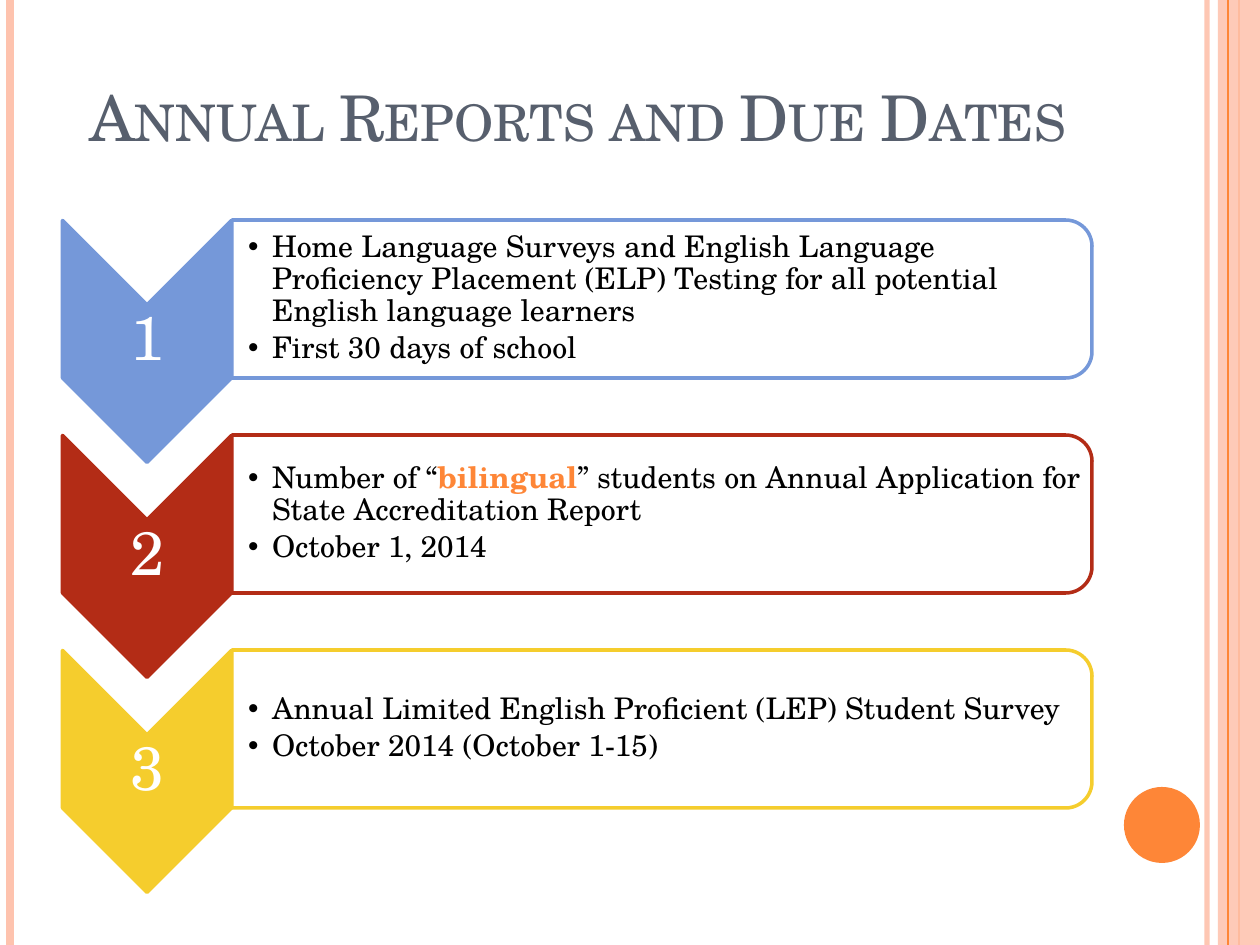
import pptx
import pptx.util
import pptx.dml.color
import pptx.enum.shapes
import pptx.enum.text
import pptx.oxml
import pptx.oxml.ns

SCALE = 914400 / 126
FONT = "TeX Gyre Schola"
PEACH, ORANGE, WHITE, BLACK = "FEC3AE", "FE8637", "FFFFFF", "000000"
Kind = pptx.enum.shapes.MSO_SHAPE
Align = pptx.enum.text.PP_ALIGN


def px(n):
    return round(n * SCALE)


def color(text):
    return pptx.dml.color.RGBColor.from_string(text)


def add(parent, tag, **attrs):
    node = pptx.oxml.parse_xml(f"<{tag} {pptx.oxml.ns.nsdecls('a')}/>")
    for key, val in attrs.items():
        node.set(key, str(val))
    parent.append(node)
    return node


class Deck:
    def __init__(self):
        self.file = pptx.Presentation()
        self.file.slide_width = px(1260)
        self.file.slide_height = px(945)
        self.slide = self.file.slides.add_slide(self.file.slide_layouts[4])
        self.shapes = self.slide.shapes

    def paint(self, fill, hue, alpha=100):
        fill.solid()
        fill.fore_color.rgb = color(hue)
        if alpha < 100:
            node = fill._xPr.find(".//" + pptx.oxml.ns.qn("a:srgbClr"))
            add(node, "a:alpha", val=alpha * 1000)

    def rule(self, x, hue, width, alpha=100):
        line = self.shapes.add_connector(
            pptx.enum.shapes.MSO_CONNECTOR.STRAIGHT, px(x), 0, px(x), px(945))
        self.paint(line.line.fill, hue, alpha)
        line.line.width = pptx.util.Pt(width)
        add(line._element.spPr, "a:effectLst")

    def shape(self, kind, box, fill, edge=None, alpha=100, turn=0):
        item = self.shapes.add_shape(kind, *map(px, box))
        item.shadow.inherit = False
        item.rotation = turn
        self.paint(item.fill, fill, alpha)
        if edge:
            item.line.color.rgb = color(edge)
            item.line.width = pptx.util.Pt(2)
        else:
            item.line.fill.background()

    def frame(self, item, box, pads):
        item.left, item.top, item.width, item.height = map(px, box)
        frame = item.text_frame
        frame.word_wrap = True
        frame.auto_size = pptx.enum.text.MSO_AUTO_SIZE.NONE
        frame.vertical_anchor = pptx.enum.text.MSO_ANCHOR.MIDDLE
        frame.margin_left, frame.margin_top = px(pads[0]), px(pads[1])
        frame.margin_right, frame.margin_bottom = px(pads[2]), px(pads[3])
        return frame

    def run(self, para, text, size, hue, bold=False):
        run = para.add_run()
        run.text = text
        run.font.name = FONT
        run.font.size = pptx.util.Pt(size)
        run.font.bold = bold
        run.font.color.rgb = color(hue)
        return run

    def title(self, text, box):
        para = self.frame(self.shapes.title, box, (13, 6, 13, 6)).paragraphs[0]
        para.alignment = Align.CENTER
        run = self.run(para, text, 36, "575F6D")
        run.font._element.set("cap", "small")

    def label(self, text, box):
        item = self.shapes.add_textbox(0, 0, 0, 0)
        para = self.frame(item, box, (3, 3, 3, 3)).paragraphs[0]
        para.alignment = Align.CENTER
        para.line_spacing = 0.9
        self.run(para, text, 35, WHITE)

    def bullets(self, slot, rows, box):
        item = self.slide.placeholders[slot]
        self.shapes._spTree.append(item._element)
        frame = self.frame(item, box, (16, 1, 1, 1))
        for i, row in enumerate(rows):
            para = frame.add_paragraph() if i else frame.paragraphs[0]
            para.alignment = Align.LEFT
            para.line_spacing = 0.9
            para.space_before = pptx.util.Pt(0)
            para.space_after = pptx.util.Pt(2.6)
            props = para._p.get_or_add_pPr()
            props.set("marL", str(px(24)))
            props.set("indent", str(px(-24)))
            add(props, "a:buChar", char="•")
            for text, hue in row:
                self.run(para, text, 17, hue, hue != BLACK)

    def save(self):
        for item in list(self.slide.placeholders):
            if not item.text_frame.text:
                item._element.getparent().remove(item._element)
        self.file.save("out.pptx")


STEPS = [
    ("7598D9", [
        [("Home Language Surveys and English Language Proficiency Placement "
          "(ELP) Testing for all potential English language learners", BLACK)],
        [("First 30 days of school", BLACK)]]),
    ("B32C16", [
        [("Number of “", BLACK), ("bilingual", ORANGE),
         ("” students on Annual Application for State Accreditation Report",
          BLACK)],
        [("October 1, 2014", BLACK)]]),
    ("F5CD2D", [
        [("Annual Limited English Proficient (LEP) Student Survey", BLACK)],
        [("October 2014 (October 1-15)", BLACK)]]),
]


def main():
    deck = Deck()
    deck.rule(1207, PEACH, 3, 93)
    deck.rule(10, PEACH, 4.5)
    deck.rule(1239, ORANGE, 1.5)
    deck.shape(Kind.RECTANGLE, (1218, 0, 42, 945), PEACH, alpha=87)
    deck.rule(1228, ORANGE, 0.75)
    deck.shape(Kind.OVAL, (1124, 787, 76, 76), ORANGE)
    deck.title("Annual Reports and Due Dates", (63, 38, 1029, 157))
    for i, (hue, rows) in enumerate(STEPS):
        y = 215 * i
        deck.shape(Kind.CHEVRON, (26, y + 257, 242, 169), hue, hue, turn=90)
        deck.label(str(i + 1), (63, y + 305, 169, 72))
        deck.shape(Kind.ROUND_2_SAME_RECTANGLE, (583, y - 131, 158, 860),
                   WHITE, hue, 90, 90)
        deck.bullets(i + 1, rows, (232, y + 228, 853, 141))
    deck.save()


if __name__ == "__main__":
    main()
